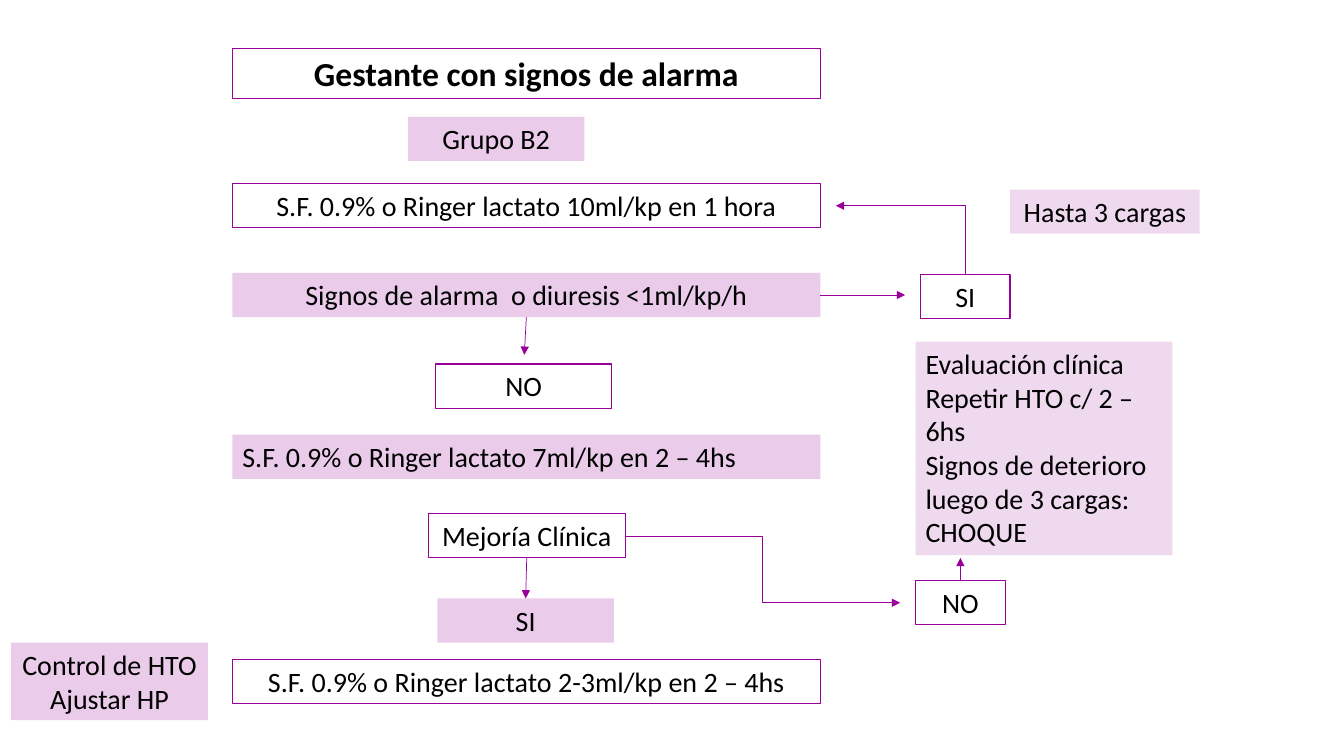
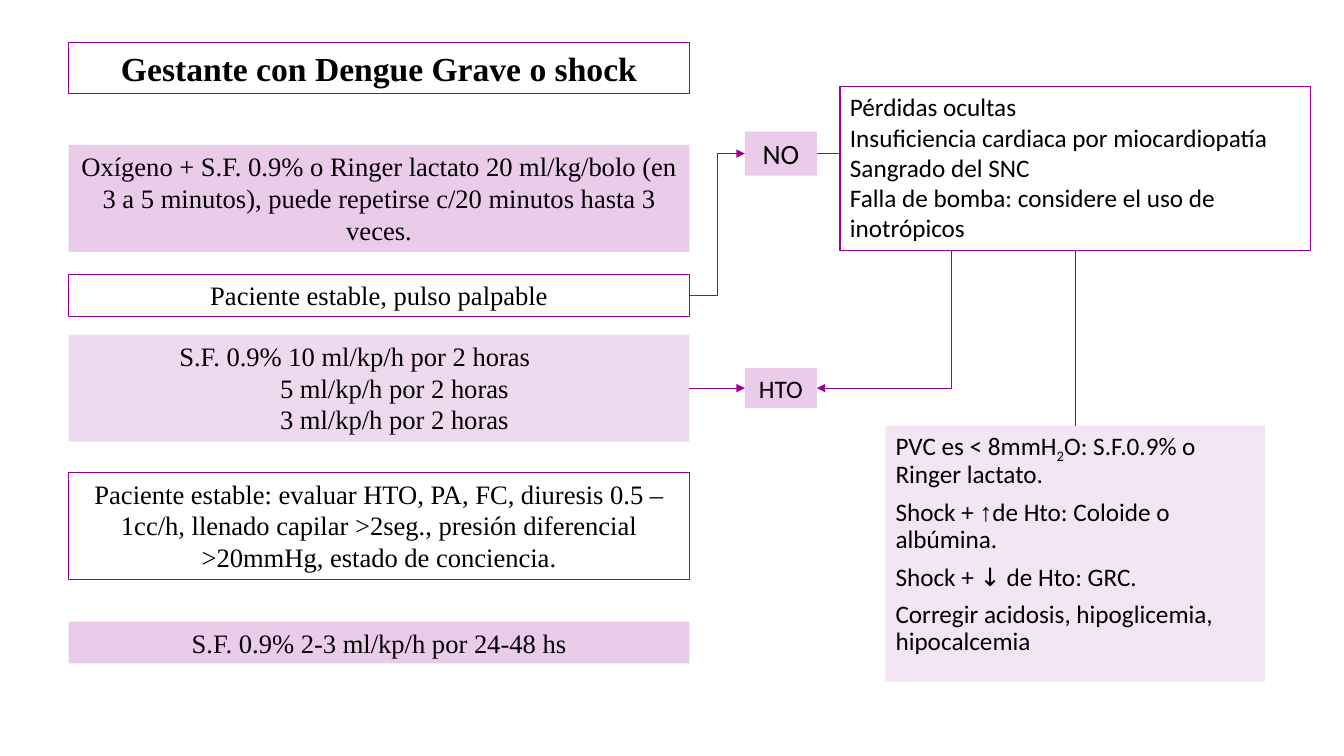
from dataclasses import dataclass, field
from lxml.etree import SubElement
from pptx import Presentation
from pptx.dml.color import RGBColor
from pptx.enum.shapes import MSO_CONNECTOR, MSO_SHAPE
from pptx.enum.text import MSO_ANCHOR, MSO_AUTO_SIZE, PP_ALIGN
from pptx.oxml.ns import qn
from pptx.util import Pt


@dataclass(frozen=True)
class Theme:
    accent: RGBColor = RGBColor(0x99, 0x00, 0x99)
    ink: RGBColor = RGBColor(0, 0, 0)
    sans: str = "Calibri"
    serif: str = "Times New Roman"
    symbol: str = "Roboto Condensed"
    title: int = 24
    label: int = 20
    dose: int = 19
    detail: int = 18
    strong: int = 20
    medium: int = 15
    light: int = 10
    outline: float = 0.75
    arrow: float = 0.5


THEME = Theme()
CENTER = {"alignment": PP_ALIGN.CENTER}
LEFT = {"alignment": PP_ALIGN.LEFT}
LIST = {**LEFT, "line_spacing": 0.9, "space_before": Pt(7.5)}
FRAME = {
    "word_wrap": True,
    "auto_size": MSO_AUTO_SIZE.NONE,
    "vertical_anchor": MSO_ANCHOR.TOP,
    "margin_left": Pt(7.2),
    "margin_right": Pt(7.2),
    "margin_top": Pt(3.6),
    "margin_bottom": Pt(3.6),
}


@dataclass(frozen=True)
class Box:
    left: float
    top: float
    width: float
    height: float

    def inside(self, left, top, width, height):
        return Box(self.left + left, self.top + top, width, height)


@dataclass(frozen=True)
class Block:
    paragraphs: list
    box: Box
    tint: int = 0
    size: int = THEME.label
    font: str = THEME.sans
    layout: dict = field(default_factory=lambda: CENTER)
    bold: bool = False
    indents: tuple = ()


def apply(target, values):
    for name, value in values.items():
        setattr(target, name, value)


def write_run(paragraph, text, block, font=None, baseline=0):
    run = paragraph.add_run()
    run.text = text
    apply(run.font, {"name": font or block.font, "size": Pt(block.size), "bold": block.bold})
    run.font.color.rgb = THEME.ink
    if baseline:
        run._r.get_or_add_rPr().set("baseline", str(baseline))


def write_paragraphs(shape, block):
    frame = shape.text_frame
    apply(frame, FRAME)
    for index, content in enumerate(block.paragraphs):
        paragraph = frame.add_paragraph() if index else frame.paragraphs[0]
        apply(paragraph, block.layout)
        properties = paragraph._p.get_or_add_pPr()
        indent = block.indents[index] if block.indents else 0
        properties.set("marL", str(Pt(indent)))
        properties.set("indent", "0")
        SubElement(properties, qn("a:buNone"))
        for part in [(content,)] if isinstance(content, str) else content:
            write_run(paragraph, part[0], block, *part[1:])


def draw_block(slide, block, placeholder=None):
    box = block.box
    place = {name: Pt(getattr(box, name)) for name in ("left", "top", "width", "height")}
    shape = placeholder
    if shape is None:
        shape = slide.shapes.add_shape(MSO_SHAPE.RECTANGLE, *place.values())
        shape.shadow.inherit = False
    apply(shape, place)
    if block.tint:
        shape.fill.solid()
        shape.fill.fore_color.rgb = THEME.accent
        color = shape._element.spPr.find(qn("a:solidFill"))[0]
        SubElement(color, qn("a:alpha"), val=str(block.tint * 1000))
        shape.line.fill.background()
    else:
        shape.fill.background()
        shape.line.color.rgb = THEME.accent
        shape.line.width = Pt(THEME.outline)
    write_paragraphs(shape, block)
    return shape


def draw_blocks(slide, blocks):
    return {name: draw_block(slide, block) for name, block in blocks.items()}


def draw_title(slide, text, box, font):
    block = Block([text], box, size=THEME.title, font=font, bold=True)
    draw_block(slide, block, slide.shapes.title)


def side_point(shape, side):
    across, down = ((0.5, 0), (0, 0.5), (0.5, 1), (1, 0.5))[side]
    return (shape.left + shape.width * across) / Pt(1), (shape.top + shape.height * down) / Pt(1)


def draw_line(slide, start, end, kind=MSO_CONNECTOR.STRAIGHT, arrow=True):
    joined = [not isinstance(place[0], (int, float)) for place in (start, end)]
    points = [side_point(*place) if join else place for place, join in zip((start, end), joined)]
    coordinates = [Pt(value) for point in points for value in point]
    connector = slide.shapes.add_connector(kind, *coordinates)
    if joined[0]:
        connector.begin_connect(*start)
    if joined[1]:
        connector.end_connect(*end)
    connector.line.color.rgb = THEME.accent
    connector.line.width = Pt(THEME.arrow)
    properties = connector._element.spPr
    if arrow:
        SubElement(properties.find(qn("a:ln")), qn("a:tailEnd"), type="triangle")
    SubElement(properties, qn("a:effectLst"))
    return connector


def draw_corner(slide, start, end):
    (start_x, start_y), (end_x, end_y) = start, end
    center_x, center_y = (start_x + end_x) / 2, (start_y + end_y) / 2
    half_length, half_depth = abs(end_y - start_y) / 2, abs(end_x - start_x) / 2
    upward = end_y < start_y
    rise = half_depth if upward else -half_depth
    connector = draw_line(
        slide,
        (center_x - half_length, center_y + rise),
        (center_x + half_length, center_y - rise),
        MSO_CONNECTOR.ELBOW,
    )
    properties = connector._element.spPr
    properties.find(qn("a:xfrm")).set("rot", str((270 if upward else 90) * 60000))
    properties.find(qn("a:prstGeom")).set("prst", "bentConnector2")


def alarm_column(slide, box):
    def row(left, top, width):
        return box.inside(left, top, width, 31.5)

    def full(top):
        return row(0, top, box.width)

    draw_title(slide, "Gestante con signos de alarma", box.inside(0, 0, box.width, 36), THEME.sans)
    return draw_blocks(slide, {
        "group": Block(["Grupo B2"], row(125.5, 49, 126), THEME.strong),
        "first_load": Block(["S.F. 0.9% o Ringer lactato 10ml/kp en 1 hora"], full(96.5)),
        "signs": Block(["Signos de alarma  o diuresis <1ml/kp/h"], full(160.5), THEME.strong),
        "no": Block(["NO"], row(145, 225.5, 126)),
        "second_load": Block(["S.F. 0.9% o Ringer lactato 7ml/kp en 2 – 4hs"], full(276), THEME.strong, layout=LEFT),
        "improvement": Block(["Mejoría Clínica"], row(140, 332.5, 140.5)),
        "yes": Block(["SI"], row(146.5, 393, 126), THEME.strong),
        "maintenance": Block(["S.F. 0.9% o Ringer lactato 2-3ml/kp en 2 – 4hs"], full(436.5)),
    })


def reassessment_side(slide, box):
    return draw_blocks(slide, {
        "loads": Block(["Hasta 3 cargas"], box.inside(67.5, 0, 135.5, 31.5), THEME.medium),
        "yes": Block(["SI"], box.inside(3.5, 60.5, 64, 31.5)),
        "evaluation": Block(
            ["Evaluación clínica", "Repetir HTO c/ 2 – 6hs", "Signos de deterioro luego de 3 cargas: CHOQUE"],
            box.inside(0, 108.5, 183.5, 152.5), THEME.medium, layout=LEFT),
        "no": Block(["NO"], box.inside(0, 279, 64, 31.5)),
    })


def alarm_slide(presentation):
    slide = presentation.slides.add_slide(presentation.slide_layouts[5])
    column = alarm_column(slide, Box(166, 34.5, 420, 468))
    side = reassessment_side(slide, Box(654, 135.5, 203, 310.5))
    draw_block(slide, Block(["Control de HTO", "Ajustar HP"], Box(8, 459, 140.5, 55.5), THEME.strong))
    draw_line(slide, (column["signs"], 3), (646.5, 210.75))
    draw_corner(slide, side_point(side["yes"], 0), (597, 147))
    draw_line(slide, (column["signs"], 2), (374.5, 253.5))
    draw_line(slide, (column["improvement"], 3), (643, 430.5), MSO_CONNECTOR.ELBOW)
    draw_line(slide, (column["improvement"], 2), (column["yes"], 0))
    draw_line(slide, (side["no"], 0), (686, 398.5))


def shock_column(slide, box):
    def row(paragraphs, top, height, tint=0, **options):
        return Block(paragraphs, box.inside(0, top, box.width, height), tint, THEME.dose, THEME.serif, **options)

    draw_title(slide, "Gestante con Dengue Grave o shock", box.inside(0, 0, box.width, 36), THEME.serif)
    return draw_blocks(slide, {
        "bolus": row(["Oxígeno + S.F. 0.9% o Ringer lactato 20 ml/kg/bolo (en 3 a 5 minutos), "
                      "puede repetirse c/20 minutos hasta 3 veces."], 73, 76.5, THEME.strong),
        "pulse": row(["Paciente estable, pulso palpable"], 165.5, 30),
        "infusion": row(["S.F. 0.9% 10 ml/kp/h por 2 horas", "5 ml/kp/h por 2 horas", "3 ml/kp/h por 2 horas"],
                        208.5, 76.5, THEME.medium, layout=LEFT, indents=(72, 144, 144)),
        "stable": row(["Paciente estable: evaluar HTO, PA, FC, diuresis 0.5 – 1cc/h, llenado capilar >2seg., "
                       "presión diferencial >20mmHg, estado de conciencia."], 307, 76.5),
        "maintenance": row(["S.F. 0.9% 2-3 ml/kp/h por 24-48 hs"], 413.5, 30, THEME.strong),
    })


def complication_side(slide, box):
    treatment = Block([
        [("PVC es < 8mmH",), ("2", None, -25000), ("O: S.F.0.9% o Ringer lactato.",)],
        [("Shock + ",), ("↑", THEME.serif), ("de Hto: Coloide o albúmina.",)],
        [("Shock + ",), ("↓ ", THEME.symbol), ("de Hto: GRC.",)],
        "Corregir acidosis, hipoglicemia, hipocalcemia",
    ], box.inside(100.5, 242, 271, 183), THEME.light, THEME.detail, layout=LIST)
    blocks = draw_blocks(slide, {
        "no": Block(["NO"], box.inside(0, 32, 51.5, 31.5), THEME.strong),
        "causes": Block(
            ["Pérdidas ocultas", "Insuficiencia cardiaca por miocardiopatía", "Sangrado del SNC",
             "Falla de bomba: considere el uso de inotrópicos"],
            box.inside(68, 0, 336, 117), size=THEME.detail, layout=LEFT),
        "hematocrit": Block(["HTO"], box.inside(0, 201, 51.5, 28.5), THEME.strong, THEME.detail),
    })
    return {**blocks, "treatment": draw_block(slide, treatment, slide.placeholders[1])}


def shock_slide(presentation):
    slide = presentation.slides.add_slide(presentation.slide_layouts[1])
    column = shock_column(slide, Box(49, 30.5, 443.5, 443.5))
    side = complication_side(slide, Box(532, 62, 404, 425))
    draw_line(slide, (column["pulse"], 3), (side["no"], 1), MSO_CONNECTOR.ELBOW)
    draw_line(slide, (side["no"], 3), (600, 109.75), arrow=False)
    draw_line(slide, (side["causes"], 2), (side["treatment"], 0), arrow=False)
    draw_line(slide, (column["infusion"], 3), (side["hematocrit"], 1))
    draw_corner(slide, (679.5, 179), side_point(side["hematocrit"], 3))


def main():
    presentation = Presentation()
    apply(presentation, {"slide_width": Pt(960), "slide_height": Pt(540)})
    alarm_slide(presentation)
    shock_slide(presentation)
    presentation.save("out.pptx")


if __name__ == "__main__":
    main()
